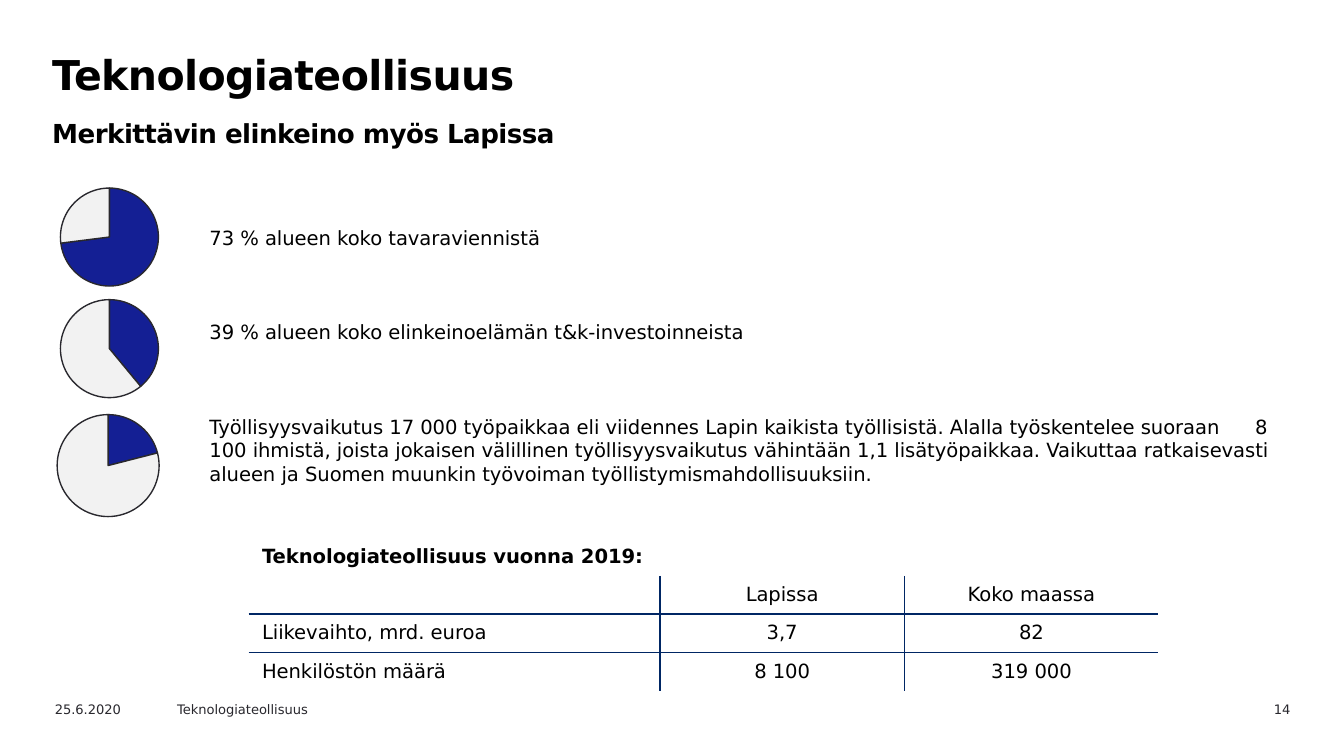
from lxml import etree
from pptx import Presentation
from pptx import util as u
from pptx.chart.data import CategoryChartData
from pptx.dml.color import RGBColor
from pptx.enum import chart as charts, text
from pptx.oxml import parse_xml
from pptx.oxml.ns import nsdecls, qn

SCALE = 9144  # 100 px to the inch
FONT = "DejaVu Sans"
COLORS = {"black": "000000", "grey": "29282E", "blue": "141F94",
          "pale": "F2F2F2", "rule": "002664"}
LEFT, CENTER, RIGHT = text.PP_ALIGN.LEFT, text.PP_ALIGN.CENTER, text.PP_ALIGN.RIGHT


def px(value):
    return u.Emu(value * SCALE)


def color(name):
    return RGBColor.from_string(COLORS[name])


class SlideBuilder:
    def __init__(self, page):
        self.page = page

    def style(self, span, size, name="black", bold=False):
        span.font.name = FONT
        span.font.size = u.Pt(size)
        span.font.bold = bold
        span.font.color.rgb = color(name)

    def text(self, x, y, w, h, lines, size, name="black", align=LEFT, gap=0):
        box = self.page.shapes.add_textbox(px(x), px(y), px(w), px(h))
        frame = box.text_frame
        frame.word_wrap = True
        frame.text = "\n".join(lines)
        for index, para in enumerate(frame.paragraphs):
            para.alignment = align
            if index:
                para.space_before = u.Pt(gap)
            for span in para.runs:
                self.style(span, size, name)
        return frame

    def heading(self, x, y, w, h, title, subtitle):
        frame = self.text(x, y, w, h, [f"{title}\v{subtitle}"], 22)
        para = frame.paragraphs[0]
        para.line_spacing = u.Pt(27)
        for span, size in zip(para.runs, (22, 14)):
            self.style(span, size, bold=True)
            span.font._element.set("spc", "-30")

    def tab_stop(self, para, position):
        para._p.get_or_add_pPr().append(parse_xml(
            f'<a:tabLst {nsdecls("a")}><a:tab pos="{px(position)}" algn="l"/></a:tabLst>'))

    def pie(self, x, y, size, share):
        data = CategoryChartData()
        data.categories = ["1", "2"]
        data.add_series("Series 1", (share, 100 - share))
        chart = self.page.shapes.add_chart(
            charts.XL_CHART_TYPE.PIE, px(x), px(y), px(size), px(size), data).chart
        chart.has_legend = False
        chart.has_title = False
        chart.font.name = FONT
        chart.font.size = u.Pt(18)
        chart.font.color.rgb = color("grey")
        plot = chart.plots[0]
        plot.vary_by_categories = False
        for index, name in enumerate(("blue", "pale")):
            fmt = plot.series[0].points[index].format
            fmt.fill.solid()
            fmt.fill.fore_color.rgb = color(name)
            fmt.line.color.rgb = color("grey")
            fmt.line.width = u.Pt(0.75)
        # Centre the disc in its frame
        area = chart._chartSpace.find(".//" + qn("c:plotArea"))
        for old in area.findall(qn("c:layout")):
            area.remove(old)
        places = "".join(f'<c:{key} val="{value}"/>' for key, value in
                         (("x", 0.14), ("y", 0.14), ("w", 0.73), ("h", 0.73)))
        area.insert(0, parse_xml(
            f'<c:layout {nsdecls("c")}><c:manualLayout><c:layoutTarget val="inner"/>'
            f'<c:xMode val="edge"/><c:yMode val="edge"/>{places}'
            '</c:manualLayout></c:layout>'))

    def borders(self, cell, sides):
        props = cell._tc.get_or_add_tcPr()
        for side in "LRTB":
            if side in sides:
                paint = f'<a:solidFill><a:srgbClr val="{COLORS["rule"]}"/></a:solidFill>'
                width = u.Pt(1)
            else:
                paint, width = "<a:noFill/>", 0
            props.append(parse_xml(
                f'<a:ln{side} {nsdecls("a")} w="{width}">{paint}</a:ln{side}>'))

    def table(self, x, y, widths, height, rows):
        count, last = len(rows), len(widths) - 1
        table = self.page.shapes.add_table(
            count, len(widths), px(x), px(y), px(sum(widths)), px(height)).table
        table.first_row = table.horz_banding = False
        for column, width in zip(table.columns, widths):
            column.width = px(width)
        for r, row in enumerate(rows):
            table.rows[r].height = px(height) // count
            for c, words in enumerate(row):
                cell = table.cell(r, c)
                # Rules run only between the cells below the title row
                inner = {"L": c > 0, "R": c < last, "T": r > 1, "B": r < count - 1}
                self.borders(cell, [s for s in inner if r and inner[s]])
                cell.fill.background()
                cell.vertical_anchor = text.MSO_ANCHOR.MIDDLE
                para = cell.text_frame.paragraphs[0]
                para.text = words
                para.alignment = CENTER if c else LEFT
                for span in para.runs:
                    self.style(span, 10.5, bold=r == 0)
                if not words:
                    etree.SubElement(para._p, qn("a:endParaRPr"), sz="1050")
        table.cell(0, 0).merge(table.cell(0, last))


def main():
    deck = Presentation()
    deck.slide_width = px(1000)
    deck.slide_height = px(1000) * 9 // 16
    slide = SlideBuilder(deck.slides.add_slide(deck.slide_layouts[6]))

    # Heading
    slide.heading(29, 31, 874, 71, "Teknologiateollisuus",
                  "Merkittävin elinkeino myös Lapissa")

    # Footer
    slide.text(876, 517, 94, 18, ["14"], 7, "grey", RIGHT)
    slide.text(31, 517, 100, 18, ["25.6.2020"], 7, "grey")
    slide.text(122, 517, 142, 18, ["Teknologiateollisuus"], 7, "grey")

    # Key facts
    facts = slide.text(146, 163, 819, 242, [
        "73 % alueen koko tavaraviennistä",
        "39 % alueen koko elinkeinoelämän t&k-investoinneista",
        "Työllisyysvaikutus 17 000 työpaikkaa eli viidennes Lapin kaikista "
        "työllisistä. Alalla työskentelee suoraan\t8 100 ihmistä, joista jokaisen "
        "välillinen työllisyysvaikutus vähintään 1,1 lisätyöpaikkaa. Vaikuttaa "
        "ratkaisevasti alueen ja Suomen muunkin työvoiman "
        "työllistymismahdollisuuksiin."], 10.5, gap=38)
    slide.tab_stop(facts.paragraphs[-1], 778)

    # Shares
    for x, y, size, share in ((31, 126, 100, 73), (31, 209, 100, 39), (28, 294, 104, 21)):
        slide.pie(x, y, size, share)

    # Key figures
    slide.table(185, 400, (306, 182, 189), 114, [
        ("Teknologiateollisuus vuonna 2019:", "", ""),
        ("", "Lapissa", "Koko maassa"),
        ("Liikevaihto, mrd. euroa", "3,7", "82"),
        ("Henkilöstön määrä", "8 100", "319 000")])

    deck.save("out.pptx")


if __name__ == "__main__":
    main()
